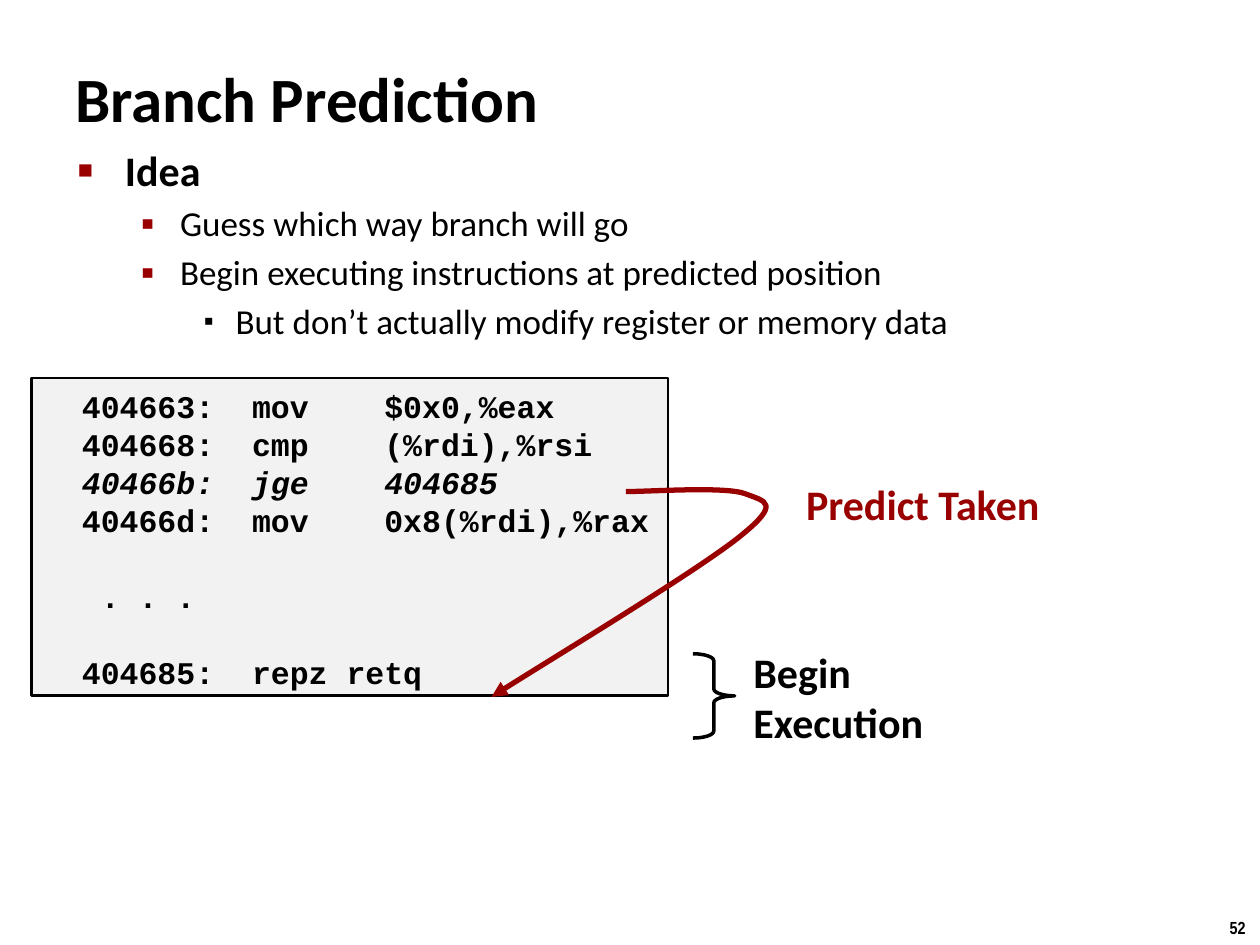
from dataclasses import dataclass

from lxml.etree import SubElement
from pptx import Presentation
from pptx.dml.color import RGBColor
from pptx.enum.shapes import MSO_SHAPE as Shape
from pptx.enum.text import MSO_ANCHOR as Anchor, PP_ALIGN as Align
from pptx.oxml.ns import qn
from pptx.util import Cm, Pt


@dataclass(frozen=True)
class Theme:
    ink: str = "000000"
    accent: str = "990000"
    panel: str = "F2F2F2"
    sans: str = "Calibri"
    mono: str = "Courier New"
    narrow: str = "Arial Narrow"
    title: int = 36
    heading: int = 24
    body: int = 20
    code: int = 18
    footer: int = 10
    code_pitch: float = 21.7


THEME = Theme()

# Per outline level: left margin and hanging indent (cm), bullet, its size, its colour
LEVELS = [
    (0.95, 0.95, "■", 60, THEME.accent),
    (2.06, 0.79, "▪", 110, THEME.accent),
    (3.18, 0.64, "▪", 80, THEME.ink),
]
IDEAS = [
    (0, "Idea"),
    (1, "Guess which way branch will go"),
    (1, "Begin executing instructions at predicted position"),
    (2, "But don’t actually modify register or memory data"),
]
CODE = [
    "404663:\tmov\t$0x0,%eax",
    "404668:\tcmp\t(%rdi),%rsi",
    "40466b:\tjge\t404685",
    "40466d:\tmov\t0x8(%rdi),%rax",
    ". . .",
    "404685:\trepz retq",
]
BRANCH, ELLIPSIS, TARGET = 2, 4, 5
CHAR = 0.381  # width in cm of one code character

# Start point, then three Bezier points for each curve, in cm
ARROW = [
    (0, 4.25),
    (0.83, 3.71), (4.14, 1.71), (5, 1.02),
    (5.86, 0.33), (5.51, 0.31), (5.13, 0.16),
    (4.75, 0), (3.22, 0.11), (2.71, 0.11),
]


def style(para, size, font=THEME.sans, color=THEME.ink, bold=True, italic=False):
    for span in para.runs:
        span.font.name = font
        span.font.size = Pt(size)
        span.font.bold = bold
        span.font.italic = italic
        span.font.color.rgb = RGBColor.from_string(color)


def outline(shape, color, width):
    shape.shadow.inherit = False
    shape.line.color.rgb = RGBColor.from_string(color)
    shape.line.width = Pt(width)


def add_text(page, box, text, size, wrap=False, **look):
    frame = page.shapes.add_textbox(*map(Cm, box)).text_frame
    frame.word_wrap = wrap
    frame.text = text
    for para in frame.paragraphs:
        style(para, size, **look)
    return frame


def add_bullet(para, level):
    margin, hanging, mark, percent, color = LEVELS[level]
    props = para._p.get_or_add_pPr()
    props.set("marL", str(Cm(margin)))
    props.set("indent", str(-Cm(hanging)))
    SubElement(SubElement(props, qn("a:buClr")), qn("a:srgbClr"), val=color)
    SubElement(props, qn("a:buSzPct"), val=str(percent * 1000))
    SubElement(props, qn("a:buFont"), typeface="Arial")
    SubElement(props, qn("a:buChar"), char=mark)


def add_ideas(page, box):
    text = "\n".join(line for _, line in IDEAS)
    frame = add_text(page, box, text, THEME.body, wrap=True)
    for para, (level, _) in zip(frame.paragraphs, IDEAS):
        size = THEME.body if level else THEME.heading
        para.level = level
        para.space_before = Pt(size * 0.2)
        add_bullet(para, level)
        style(para, size, bold=level == 0)


def add_code(page, box):
    panel = page.shapes.add_shape(Shape.RECTANGLE, *map(Cm, box))
    outline(panel, THEME.ink, 1.5)
    panel.fill.solid()
    panel.fill.fore_color.rgb = RGBColor.from_string(THEME.panel)
    frame = panel.text_frame
    frame.word_wrap = True
    frame.vertical_anchor = Anchor.TOP
    frame.margin_left = Cm(0.25 + 2 * CHAR)
    frame.margin_right = Cm(0.25)
    frame.margin_top = Cm(0.18)
    frame.margin_bottom = Cm(0)
    frame.text = "\n".join(CODE)
    for row, para in enumerate(frame.paragraphs):
        para.alignment = Align.LEFT
        para.line_spacing = Pt(THEME.code_pitch)
        if row in (ELLIPSIS, TARGET):
            para.space_before = Pt(THEME.code_pitch)
        props = para._p.get_or_add_pPr()
        if row == ELLIPSIS:
            props.set("marL", str(Cm(CHAR)))
        tabs = SubElement(props, qn("a:tabLst"))
        for column in (9, 16):
            SubElement(tabs, qn("a:tab"), pos=str(Cm(column * CHAR)), algn="l")
        style(para, THEME.code, font=THEME.mono, italic=row == BRANCH)


def add_jump_arrow(page, left, top):
    """Draw the curve from the branch target, where the arrowhead is, to the branch."""
    start, *points = [(Cm(left + x), Cm(top + y)) for x, y in ARROW]
    builder = page.shapes.build_freeform(*start)
    builder.add_line_segments(points, close=False)
    arrow = builder.convert_to_shape()
    arrow.fill.background()
    outline(arrow, THEME.accent, 3)
    SubElement(arrow.line._get_or_add_ln(), qn("a:headEnd"), type="triangle")

    # Each three line segments become one Bezier curve
    segments = list(arrow._element.iter(qn("a:lnTo")))
    for first in range(0, len(segments), 3):
        curve = SubElement(segments[first].getparent(), qn("a:cubicBezTo"))
        for segment in segments[first:first + 3]:
            curve.append(segment[0])
            segment.getparent().remove(segment)


def add_execution_note(page, left, top):
    brace = page.shapes.add_shape(
        Shape.RIGHT_BRACE, Cm(left), Cm(top + 0.28), Cm(0.84), Cm(1.7))
    brace.adjustments[0] = 0.167
    brace.fill.background()
    outline(brace, THEME.ink, 2)
    add_text(page, (left + 0.97, top, 3.96, 2.31), "Begin\nExecution", THEME.heading)


def main():
    deck = Presentation()
    deck.slide_width, deck.slide_height = Cm(25.4), Cm(19.05)
    page = deck.slides.add_slide(deck.slide_layouts[6])
    add_text(page, (24.54, 18.36, 0.86, 0.69), "52", THEME.footer, font=THEME.narrow)
    title = add_text(page, (1.27, 1.17, 15.65, 1.6), "Branch Prediction",
                     THEME.title, wrap=True)
    title.vertical_anchor = Anchor.MIDDLE
    add_ideas(page, (1.32, 2.79, 23.09, 5.69))
    add_text(page, (16, 9.53, 5.26, 1.27), "Predict Taken", THEME.heading,
             color=THEME.accent)
    add_execution_note(page, 13.97, 12.9)
    add_code(page, (0.64, 7.62, 12.83, 6.4))
    add_jump_arrow(page, 9.91, 9.8)
    deck.save("out.pptx")


if __name__ == "__main__":
    main()
